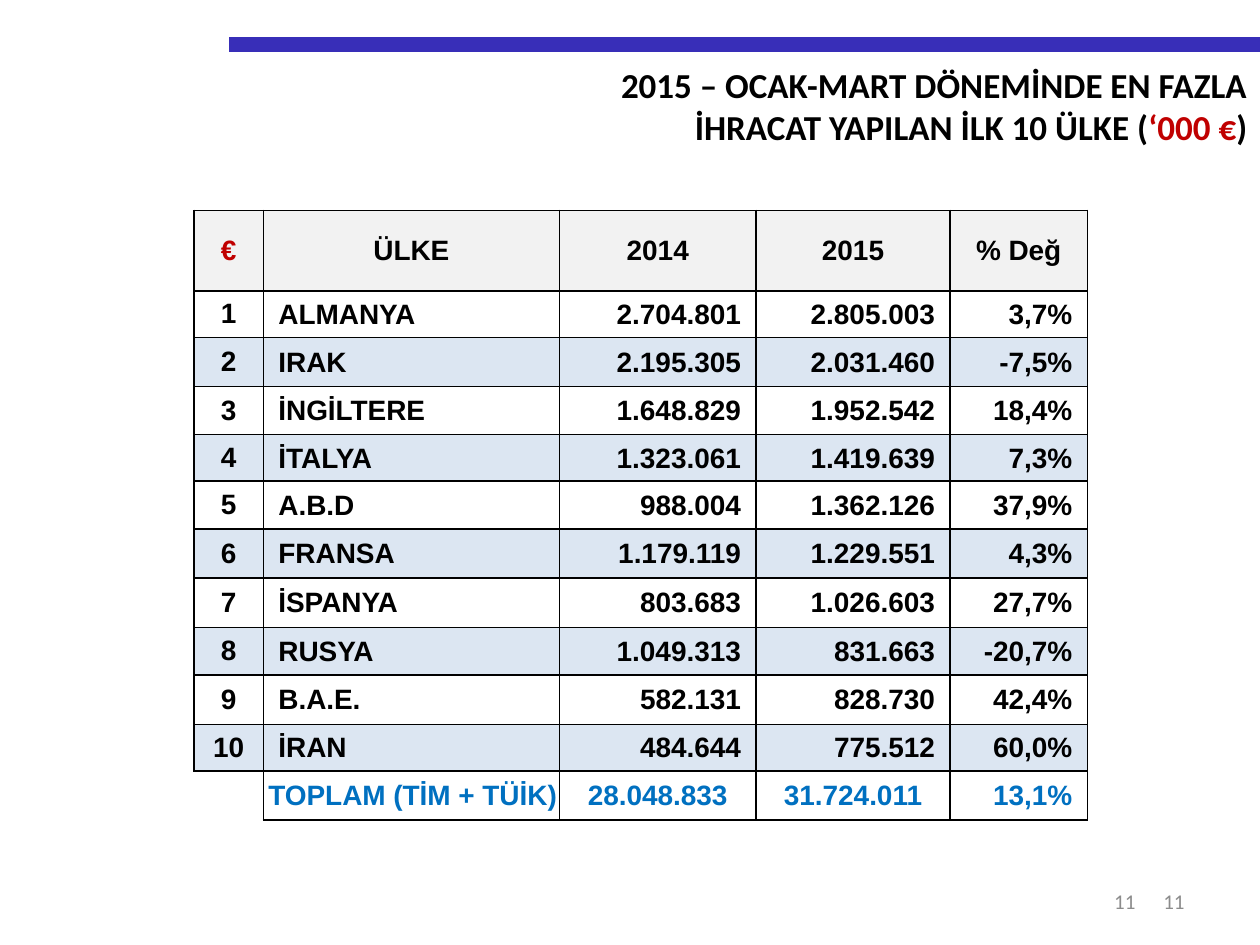
from lxml import etree
from pptx import Presentation
from pptx.dml.color import RGBColor
from pptx.enum.shapes import MSO_CONNECTOR
from pptx.enum.text import MSO_ANCHOR as ANCHOR, MSO_AUTO_SIZE as FIT, PP_ALIGN as ALIGN
from pptx.oxml.ns import qn
from pptx.util import Inches, Pt

COLORS = {
    "black": "000000", "red": "C00000", "blue": "0070C0", "bar": "382EB8",
    "grey": "8C8C8C", "header": "F2F2F2", "band": "DCE6F2",
}
TITLE = [
    [("2015 – OCAK-MART DÖNEMİNDE EN FAZLA", "black")],
    [("İHRACAT YAPILAN İLK 10 ÜLKE (", "black"), ("‘000 €", "red"), (")", "black")],
]
HEADER = ["€", "ÜLKE", "2014", "2015", "% Değ"]
COUNTRIES = [
    ["ALMANYA", "2.704.801", "2.805.003", "3,7%"],
    ["IRAK", "2.195.305", "2.031.460", "-7,5%"],
    ["İNGİLTERE", "1.648.829", "1.952.542", "18,4%"],
    ["İTALYA", "1.323.061", "1.419.639", "7,3%"],
    ["A.B.D", "988.004", "1.362.126", "37,9%"],
    ["FRANSA", "1.179.119", "1.229.551", "4,3%"],
    ["İSPANYA", "803.683", "1.026.603", "27,7%"],
    ["RUSYA", "1.049.313", "831.663", "-20,7%"],
    ["B.A.E.", "582.131", "828.730", "42,4%"],
    ["İRAN", "484.644", "775.512", "60,0%"],
]
TOTAL = ["", "TOPLAM (TİM + TÜİK)", "28.048.833", "31.724.011", "13,1%"]
COL_WIDTHS = [0.55, 2.35, 1.56, 1.54, 1.09]
ROW_HEIGHTS = [0.64, 0.37, 0.39, 0.38, 0.37, 0.38, 0.39, 0.39, 0.38, 0.39, 0.37, 0.39]

# Cell formats: alignment and left, top, right, bottom margins
CENTERED = (ALIGN.CENTER, (0.1, 0.05, 0.1, 0.05))
NAME = (ALIGN.LEFT, (0.12, 0.01, 0.01, 0))
NUMBER = (ALIGN.RIGHT, (0.01, 0.01, 0.12, 0))
TOTAL_NAME = (ALIGN.LEFT, (0.04, 0.01, 0.01, 0))
TOTAL_NUMBER = (ALIGN.CENTER, (0.01, 0.01, 0.01, 0))
EMPTY = (ALIGN.CENTER, (0, 0, 0, 0))
HEADER_FORMATS = [CENTERED] * 5
COUNTRY_FORMATS = [CENTERED, NAME, NUMBER, NUMBER, NUMBER]
TOTAL_FORMATS = [EMPTY, TOTAL_NAME, TOTAL_NUMBER, TOTAL_NUMBER, NUMBER]


def rgb(name):
    return RGBColor.from_string(COLORS[name])


def add_run(p, text, color, **font):
    r = p.add_run()
    r.text = text
    for key, value in font.items():
        setattr(r.font, key, value)
    r.font.color.rgb = rgb(color)


def add_bar(s, x1, x2, y):
    bar = s.shapes.add_connector(
        MSO_CONNECTOR.STRAIGHT, Inches(x1), Inches(y), Inches(x2), Inches(y))
    bar.line.color.rgb = rgb("bar")
    bar.line.width = Pt(8.5)
    etree.SubElement(bar._element.spPr, qn("a:effectLst"))


def add_title(s, left, top, width, height):
    sp = s.shapes.title
    sp.left, sp.top, sp.width, sp.height = map(Inches, (left, top, width, height))
    tf = sp.text_frame
    tf.auto_size, tf.vertical_anchor = FIT.SHAPE_TO_FIT_TEXT, ANCHOR.TOP
    for i, runs in enumerate(TITLE):
        p = tf.add_paragraph() if i else tf.paragraphs[0]
        p.alignment = ALIGN.RIGHT
        for text, color in runs:
            add_run(p, text, color, name="Calibri", size=Pt(20), bold=True)


def add_page_number(s, left, top, width, height):
    tf = s.shapes.add_textbox(*map(Inches, (left, top, width, height))).text_frame
    tf.word_wrap, tf.vertical_anchor = True, ANCHOR.MIDDLE
    p = tf.paragraphs[0]
    p.alignment = ALIGN.RIGHT
    add_run(p, "11", "grey", name="Calibri", size=Pt(12))


def set_borders(cell, visible):
    """Draw the sides named in visible (of L, R, T, B) and hide the others."""
    tc_pr = cell._tc.get_or_add_tcPr()
    for side in "LRTB":
        ln = etree.SubElement(tc_pr, qn("a:ln" + side), w=str(Pt(1)))
        if side in visible:
            fill = etree.SubElement(ln, qn("a:solidFill"))
            etree.SubElement(fill, qn("a:srgbClr"), val=COLORS["black"])
        else:
            etree.SubElement(ln, qn("a:noFill"))


def fill_cell(cell, text, cell_format, color, fill):
    alignment, margins = cell_format
    set_borders(cell, "LRTB" if text else "RT")
    for side, margin in zip(("left", "top", "right", "bottom"), margins):
        setattr(cell, f"margin_{side}", Inches(margin))
    cell.vertical_anchor = ANCHOR.MIDDLE
    if fill:
        cell.fill.solid()
        cell.fill.fore_color.rgb = rgb(fill)
    else:
        cell.fill.background()
    p = cell.text_frame.paragraphs[0]
    p.alignment = alignment
    if text:
        add_run(p, text, color, name="Arial", size=Pt(16), bold=True)


def add_export_table(s, left, top):
    rows = [(HEADER, HEADER_FORMATS, "black", "header")]
    for rank, country in enumerate(COUNTRIES, 1):
        fill = None if rank % 2 else "band"
        rows.append(([str(rank), *country], COUNTRY_FORMATS, "black", fill))
    rows.append((TOTAL, TOTAL_FORMATS, "blue", None))

    table = s.shapes.add_table(
        len(rows), len(HEADER), Inches(left), Inches(top),
        Inches(sum(COL_WIDTHS)), Inches(sum(ROW_HEIGHTS))).table
    table.first_row = table.horz_banding = False
    for col, width in zip(table.columns, COL_WIDTHS):
        col.width = Inches(width)
    for row, height, (texts, formats, color, fill) in zip(table.rows, ROW_HEIGHTS, rows):
        row.height = Inches(height)
        for cell, text, cell_format in zip(row.cells, texts, formats):
            fill_cell(cell, text, cell_format, "red" if text == "€" else color, fill)


def main():
    prs = Presentation()
    prs.slide_width, prs.slide_height = Inches(10), Inches(7.5)
    s = prs.slides.add_slide(prs.slide_layouts[5])
    add_bar(s, 1.82, 10, 0.35)
    add_title(s, 1.06, 0.45, 8.94, 0.77)
    add_export_table(s, 1.54, 1.67)
    add_page_number(s, 7.17, 6.95, 2.33, 0.4)
    add_page_number(s, 7.01, 6.95, 2.1, 0.4)
    prs.save("out.pptx")


if __name__ == "__main__":
    main()
